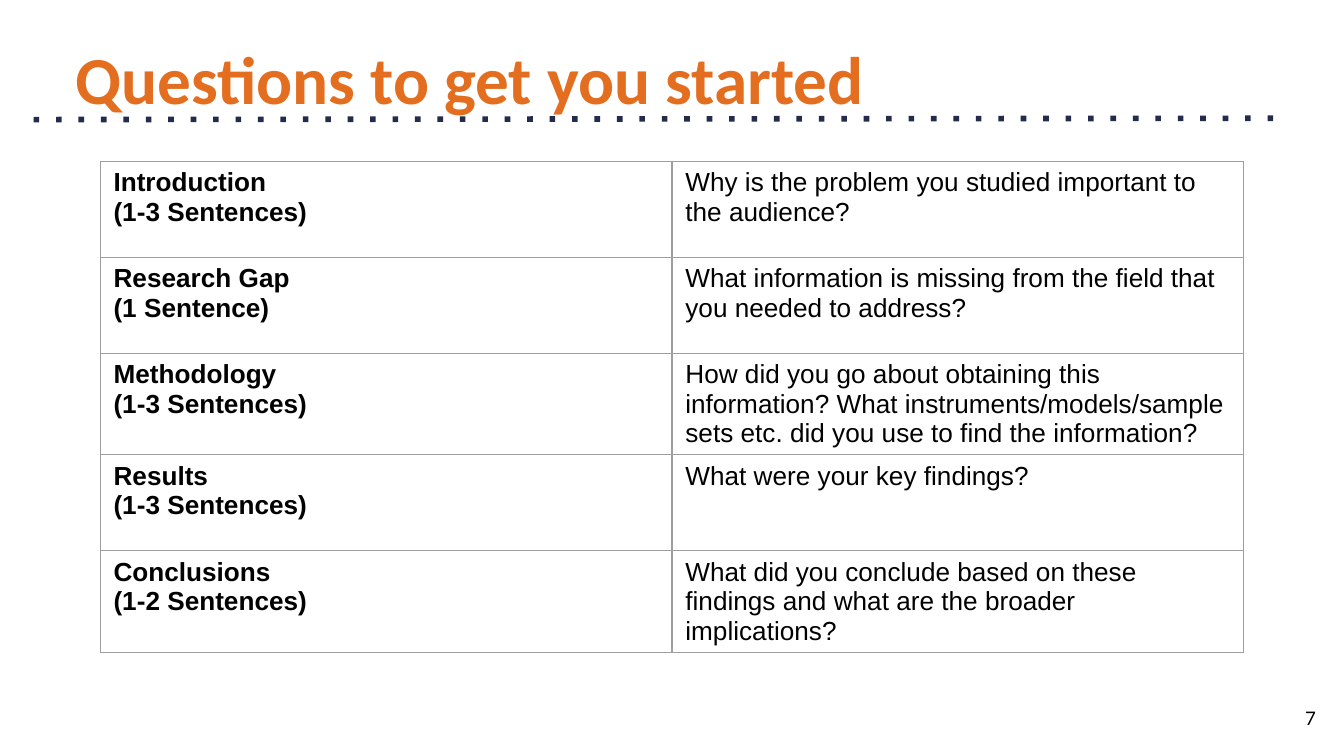
from dataclasses import dataclass
from lxml.etree import SubElement
from pptx import Presentation
from pptx.dml.color import RGBColor
from pptx.enum.shapes import MSO_CONNECTOR
from pptx.enum.text import MSO_ANCHOR, MSO_AUTO_SIZE, PP_ALIGN
from pptx.oxml.ns import qn
from pptx.util import Inches, Pt

# Content
TITLE = "Questions to get you started"
PAGE = "7"
ROWS = [
    (["Introduction", "(1-3 Sentences)"],
     "Why is the problem you studied important to the audience?"),
    (["Research Gap", "(1 Sentence)"],
     "What information is missing from the field that you needed to address?"),
    (["Methodology", "(1-3 Sentences)"],
     "How did you go about obtaining this information? "
     "What instruments/models/sample sets etc. did you use to find the information?"),
    (["Results", "(1-3 Sentences)"],
     "What were your key findings?"),
    (["Conclusions", "(1-2 Sentences)"],
     "What did you conclude based on these findings "
     "and what are the broader implications?"),
]


@dataclass(frozen=True)
class Theme:
    orange: str = "E46E20"
    navy: str = "232D4B"
    black: str = "000000"
    grey: str = "9E9E9E"
    head: tuple = ("Calibri", 36)
    body: tuple = ("Arial", 14)
    small: tuple = ("Lato", 10)


LOOK = Theme()
WIDE = 10
HIGH = WIDE * 9 / 16


def place(x, y, w, h):
    """Turn inches into a box of left, top, width, height."""
    return [Inches(v) for v in (x, y, w, h)]


def write(para, text, face, color, bold=False):
    run = para.add_run()
    run.text = text
    font = run.font
    font.name, font.size, font.bold = face[0], Pt(face[1]), bold
    font.color.rgb = RGBColor.from_string(color)


def pad(frame, anchor):
    frame.word_wrap = True
    frame.auto_size = MSO_AUTO_SIZE.NONE
    frame.vertical_anchor = anchor
    frame.margin_left = frame.margin_right = Inches(0.1)
    frame.margin_top = frame.margin_bottom = Inches(0.1)


def border(cell):
    props = cell._tc.get_or_add_tcPr()
    for side in ("lnL", "lnR", "lnT", "lnB"):
        line = SubElement(props, qn(f"a:{side}"), w=str(Pt(0.75)))
        fill = SubElement(line, qn("a:solidFill"))
        SubElement(fill, qn("a:srgbClr"), val=LOOK.grey)


def fill_cell(cell, lines, bold):
    border(cell)
    cell.fill.background()
    frame = cell.text_frame
    for i, text in enumerate(lines):
        para = frame.add_paragraph() if i else frame.paragraphs[0]
        write(para, text, LOOK.body, LOOK.black, bold)


def main():
    deck = Presentation()
    deck.slide_width, deck.slide_height = Inches(WIDE), Inches(HIGH)
    slide = deck.slides.add_slide(deck.slide_layouts[5])
    shapes = slide.shapes

    # Title
    title = shapes.title
    title.left, title.top, title.width, title.height = place(0.46, 0.18, 9.09, 0.69)
    pad(title.text_frame, MSO_ANCHOR.TOP)
    para = title.text_frame.paragraphs[0]
    para.alignment = PP_ALIGN.LEFT
    write(para, TITLE, LOOK.head, LOOK.orange, True)

    # Dotted rule, behind the title
    rule = shapes.add_connector(MSO_CONNECTOR.STRAIGHT, *place(0.25, 0.89, 9.55, 0.88))
    rule.line.color.rgb = RGBColor.from_string(LOOK.navy)
    rule.line.width = Pt(3)
    props = rule._element.spPr
    SubElement(props.find(qn("a:ln")), qn("a:prstDash"), val="dot")
    SubElement(props, qn("a:effectLst"))
    title._element.addprevious(rule._element)

    # Table: two equal columns, centred on the slide
    span, step = 8.51, 5 / 7
    box = place((WIDE - span) / 2, 1.2, span, step * len(ROWS))
    grid = shapes.add_table(len(ROWS), 2, *box)
    table = grid.table
    table.first_row = table.horz_banding = False
    for row, (topic, question) in zip(table.rows, ROWS):
        row.height = Inches(step)
        fill_cell(row.cells[0], topic, True)
        fill_cell(row.cells[1], [question], False)
    grid.height = Inches(3.74)

    # Page number
    frame = shapes.add_textbox(*place(9.29, 5.13, 0.6, 0.43)).text_frame
    pad(frame, MSO_ANCHOR.MIDDLE)
    para = frame.paragraphs[0]
    para.alignment = PP_ALIGN.RIGHT
    write(para, PAGE, LOOK.small, LOOK.black)

    deck.save("out.pptx")


if __name__ == "__main__":
    main()
